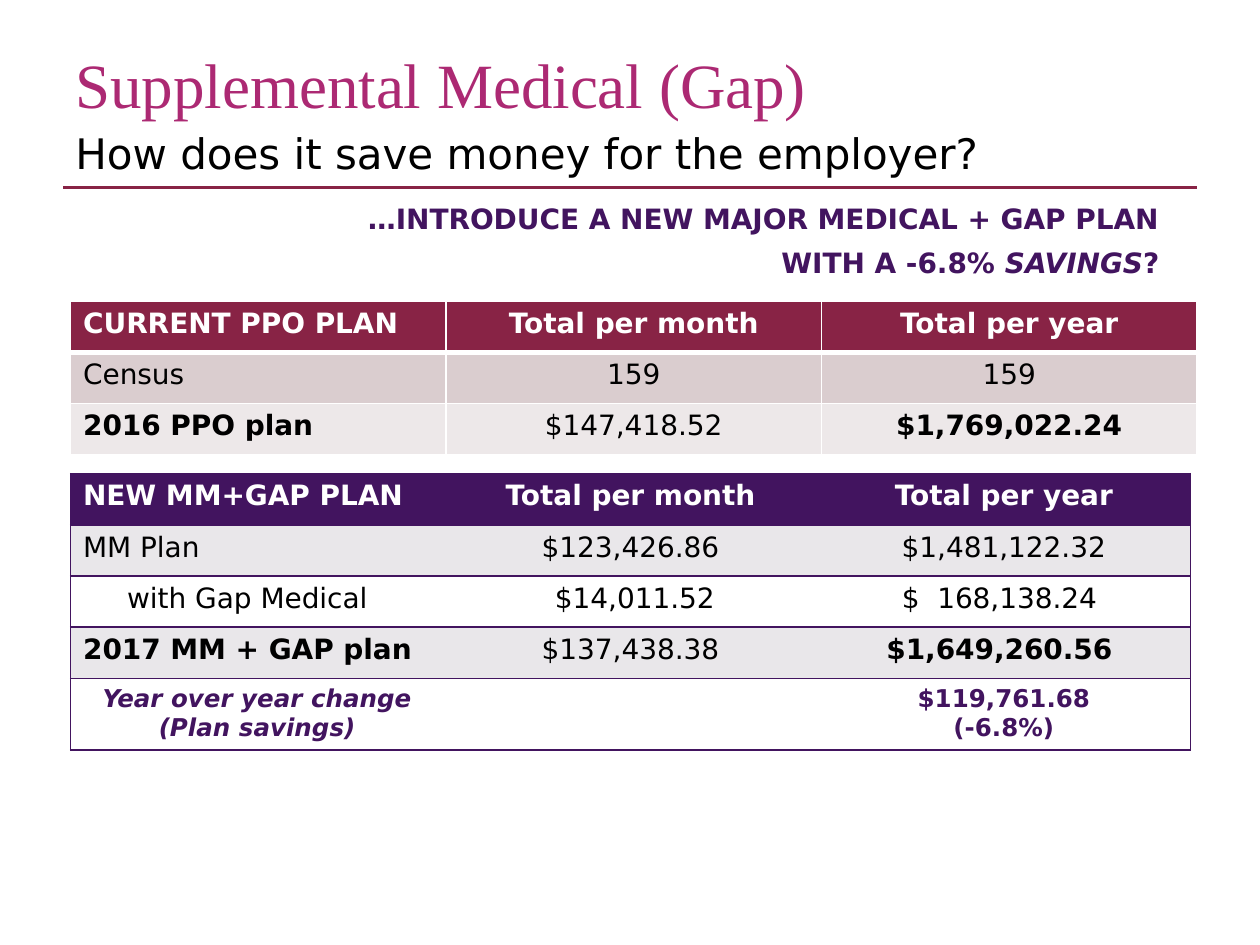
from lxml import etree
from pptx import Presentation
from pptx.dml.color import RGBColor
from pptx.enum.shapes import MSO_CONNECTOR
from pptx.enum.text import MSO_ANCHOR, PP_ALIGN
from pptx.oxml.ns import qn
from pptx.util import Inches, Pt

LEFT, CENTER, RIGHT = PP_ALIGN.LEFT, PP_ALIGN.CENTER, PP_ALIGN.RIGHT
TOP, MIDDLE = MSO_ANCHOR.TOP, MSO_ANCHOR.MIDDLE
STRAIGHT = MSO_CONNECTOR.STRAIGHT

SANS, SERIF = "DejaVu Sans", "Times New Roman"
WHITE, BLACK = "FFFFFF", "000000"
MAROON, PURPLE, PINK = "882345", "42145F", "AC2973"


def rgb(color):
    return RGBColor.from_string(color)


class SlideBuilder:
    """Holds the text style and the current slide."""

    font, size, margin = SANS, 16, 0.1

    def __init__(self, prs):
        self.slide = prs.slides.add_slide(prs.slide_layouts[6])

    def style(self, r, color, size=None, font=None, bold=False, italic=False):
        r.font.name = font or self.font
        r.font.size = Pt(size or self.size)
        r.font.color.rgb = rgb(color)
        r.font.bold = bold
        r.font.italic = italic

    def text(self, box, lines, color, align=LEFT, anchor=TOP, after=0, **font):
        """Each line is a list of (text, italic) runs."""
        sp = self.slide.shapes.add_textbox(*map(Inches, box))
        tf = sp.text_frame
        tf.word_wrap = True
        tf.vertical_anchor = anchor
        for i, line in enumerate(lines):
            p = tf.add_paragraph() if i else tf.paragraphs[0]
            p.alignment = align
            p.space_after = Pt(after)
            for text, italic in line:
                r = p.add_run()
                r.text = text
                self.style(r, color, italic=italic, **font)

    def line(self, x1, y1, x2, y2, color, width):
        c = self.slide.shapes.add_connector(STRAIGHT, *map(Inches, (x1, y1, x2, y2)))
        c.line.color.rgb = rgb(color)
        c.line.width = Pt(width)
        etree.SubElement(c._element.spPr, qn("a:effectLst"))

    def border(self, cell, side, color, width):
        ln = etree.SubElement(cell._tc.get_or_add_tcPr(), qn("a:ln" + side))
        if not width:
            etree.SubElement(ln, qn("a:noFill"))
            return
        ln.set("w", str(Pt(width)))
        fill = etree.SubElement(ln, qn("a:solidFill"))
        etree.SubElement(fill, qn("a:srgbClr")).set("val", color)

    def table(self, box, rows, head, bands, edge, inner, head_rule,
              bold=(), accent_row=None, shifts=None):
        """inner: width of inner vertical rules; shifts: extra margins, left if positive."""
        n_rows, n_cols = len(rows), len(rows[0])
        table = self.slide.shapes.add_table(n_rows, n_cols, *map(Inches, box)).table
        table.first_row = table.horz_banding = False
        for i, row in enumerate(rows):
            for j, text in enumerate(row):
                cell = table.cell(i, j)
                shift = (shifts or {}).get((i, j), 0)
                cell.margin_left = Inches(self.margin + max(shift, 0))
                cell.margin_right = Inches(self.margin + max(-shift, 0))
                # Borders come before the fill in the cell properties
                widths = {"L": inner if j else 1,
                          "R": inner if j < n_cols - 1 else 1,
                          "T": head_rule if i == 1 else 1,
                          "B": head_rule if i == 0 else 1}
                for side, width in widths.items():
                    self.border(cell, side, edge, width)
                cell.fill.solid()
                cell.fill.fore_color.rgb = rgb(bands[(i - 1) % 2] if i else head)
                # Text
                accent = i == accent_row
                color = WHITE if i == 0 else head if accent else BLACK
                cell.text_frame.text = text
                for p in cell.text_frame.paragraphs:
                    p.alignment = CENTER if j or accent else LEFT
                    for r in p.runs:
                        self.style(r, color, size=14 if accent else None,
                                   bold=i == 0 or accent or (i, j) in bold,
                                   italic=accent and j == 0)


def main():
    prs = Presentation()
    prs.slide_width, prs.slide_height = Inches(10), Inches(7.5)
    s = SlideBuilder(prs)

    # Heading
    s.line(0.5, 1.49, 9.5, 1.49, MAROON, 2)
    s.text((0.5, 0.3, 9, 0.72), [[("Supplemental Medical (Gap)", False)]],
           PINK, anchor=MIDDLE, size=36, font=SERIF)
    s.text((0.5, 1.02, 9, 0.38), [[("How does it save money for the employer?", False)]],
           BLACK, anchor=MIDDLE, size=24)

    # Proposal
    s.text((2.47, 1.55, 6.83, 0.72),
           [[("…INTRODUCE A NEW MAJOR MEDICAL + GAP PLAN", False)],
            [("WITH A -6.8% ", False), ("SAVINGS", True), ("?", False)]],
           PURPLE, align=RIGHT, after=6, bold=True)

    # Current plan
    periods = ["Total per month", "Total per year"]
    s.table((0.56, 2.39, 8.94, 1.22),
            [["CURRENT PPO PLAN", *periods],
             ["Census", "159", "159"],
             ["2016 PPO plan", "$147,418.52", "$1,769,022.24"]],
            MAROON, ("DACDCF", "EDE8E9"), WHITE, inner=1, head_rule=3,
            bold={(2, 0), (2, 2)})

    # New plan; the last row grows to hold two lines
    s.table((0.56, 3.76, 8.89, 2.03),
            [["NEW MM+GAP PLAN", *periods],
             ["MM Plan", "$123,426.86", "$1,481,122.32"],
             ["with Gap Medical", "$14,011.52", "$  168,138.24"],
             ["2017 MM + GAP plan", "$137,438.38", "$1,649,260.56"],
             ["Year over year change\n(Plan savings)", "", "$119,761.68\n(-6.8%)"]],
            PURPLE, ("E9E7EA", WHITE), PURPLE, inner=0, head_rule=1,
            bold={(3, 0), (3, 2)}, accent_row=4,
            shifts={(2, 0): 0.35, (2, 1): 0.07, (2, 2): -0.07, (3, 2): -0.07})

    prs.save("out.pptx")


if __name__ == "__main__":
    main()
